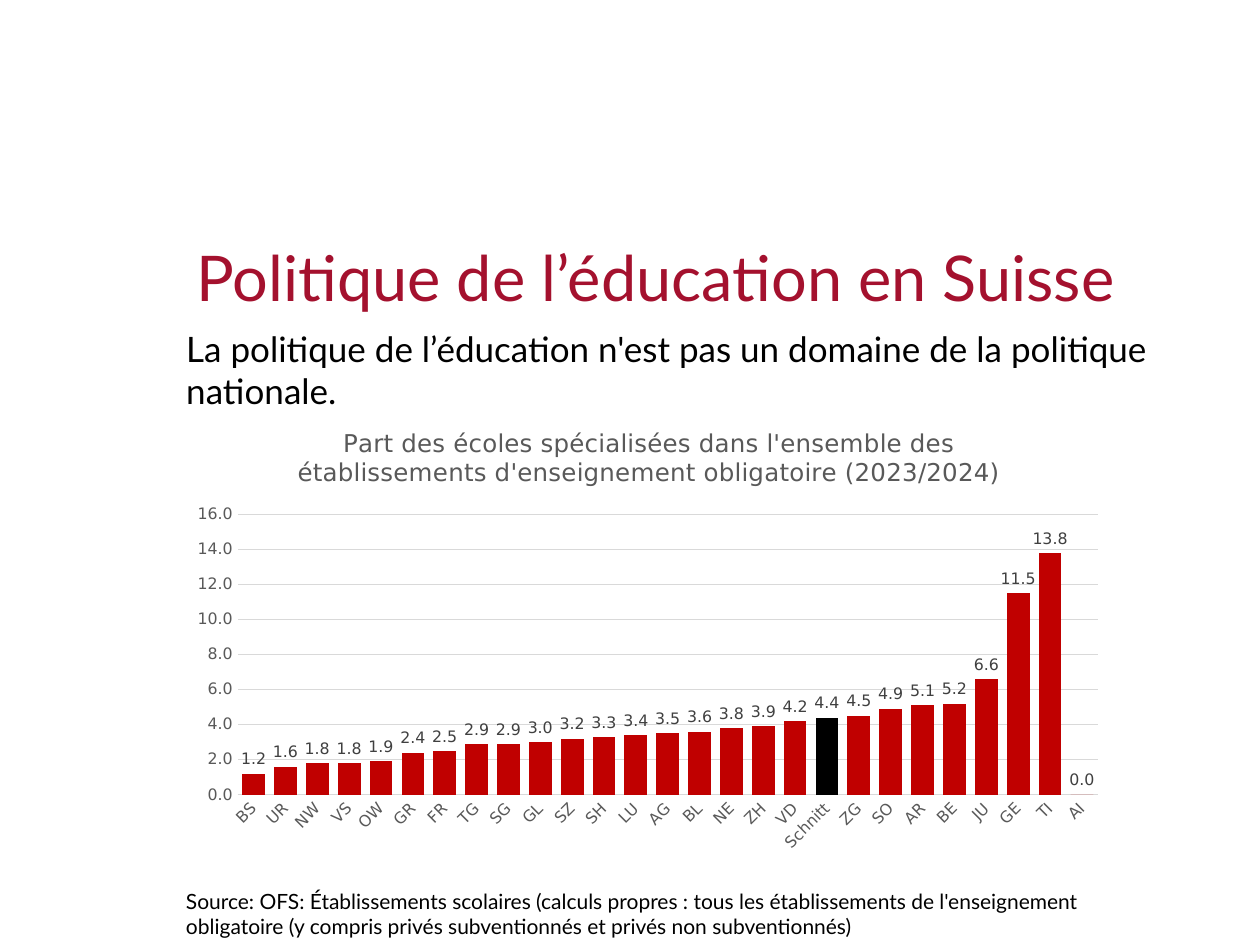
from pptx import Presentation
from pptx.chart.data import CategoryChartData
from pptx.dml.color import RGBColor
from pptx.enum.chart import XL_CHART_TYPE, XL_LABEL_POSITION, XL_TICK_MARK
from pptx.enum.text import MSO_ANCHOR, MSO_AUTO_SIZE, PP_ALIGN
from pptx.oxml import parse_xml
from pptx.oxml.ns import nsdecls
from pptx.util import Cm, Pt

COLUMN = XL_CHART_TYPE.COLUMN_CLUSTERED
ABOVE = XL_LABEL_POSITION.OUTSIDE_END
NO_TICK = XL_TICK_MARK.NONE
TOP, BOTTOM = MSO_ANCHOR.TOP, MSO_ANCHOR.BOTTOM
LEFT = PP_ALIGN.LEFT
NO_FIT = MSO_AUTO_SIZE.NONE

# Content
TITLE = "Politique de l’éducation en Suisse"
BODY = "La politique de l’éducation n'est pas un domaine de la politique nationale."
SOURCE = ("Source: OFS: Établissements scolaires (calculs propres : tous les "
          "établissements de l'enseignement obligatoire (y compris privés "
          "subventionnés et privés non subventionnés)")
HEAD = ("Part des écoles spécialisées dans l'ensemble des établissements "
        "d'enseignement obligatoire (2023/2024)")
MEAN = "Schnitt"
SHARES = {
    "BS": 1.2, "UR": 1.6, "NW": 1.8, "VS": 1.8, "OW": 1.9, "GR": 2.4,
    "FR": 2.5, "TG": 2.9, "SG": 2.9, "GL": 3.0, "SZ": 3.2, "SH": 3.3,
    "LU": 3.4, "AG": 3.5, "BL": 3.6, "NE": 3.8, "ZH": 3.9, "VD": 4.2,
    MEAN: 4.4, "ZG": 4.5, "SO": 4.9, "AR": 5.1, "BE": 5.2, "JU": 6.6,
    "GE": 11.5, "TI": 13.8, "AI": 0.0,
}
COLORS = {"title": "A4112E", "text": "000000", "bar": "C00000", "mean": "000000",
          "axis": "595959", "label": "404040", "grid": "D9D9D9"}
TEXT_FONT, CHART_FONT = "Lato", "DejaVu Sans"
PLOT = {"x": 0.06, "y": 0.24, "w": 0.92, "h": 0.62}


def color(key):
    return RGBColor.from_string(COLORS[key])


def style(font, size, key, face=CHART_FONT):
    font.name, font.size, font.bold = face, Pt(size), False
    font.color.rgb = color(key)


def write(shape, text, box, size, key="text", anchor=TOP):
    shape.left, shape.top, shape.width, shape.height = (Cm(n) for n in box)
    frame = shape.text_frame
    frame.word_wrap, frame.auto_size = True, NO_FIT
    frame.vertical_anchor = anchor
    frame.text = text
    para = frame.paragraphs[0]
    para.alignment, para.space_before = LEFT, Pt(0)
    style(para.runs[0].font, size, key, TEXT_FONT)
    return para


def rule(line, key):
    line.color.rgb = color(key)
    line.width = Pt(0.75)


def paint(fill, key):
    fill.solid()
    fill.fore_color.rgb = color(key)


deck = Presentation()
deck.slide_width, deck.slide_height = Cm(25.4), Cm(19.05)
slide = deck.slides.add_slide(deck.slide_layouts[1])

# Title, unbulleted body and source note
title, body = slide.placeholders
write(title, TITLE, (3.71, 3.28, 20.32, 3.18), 36, "title", BOTTOM)
para = write(body, BODY, (3.5, 6.48, 21.9, 11), 20)
props = para._p.get_or_add_pPr()
props.set("marL", "0")
props.set("indent", "0")
props.append(parse_xml(f"<a:buNone {nsdecls('a')}/>"))
note = slide.shapes.add_textbox(0, 0, 0, 0)
write(note, SOURCE, (3.5, 17.78, 18.6, 1.27), 12)

# Chart of shares by canton
data = CategoryChartData(number_format="0.0")
data.categories = list(SHARES)
data.add_series("Series 1", list(SHARES.values()))
chart = slide.shapes.add_chart(
    COLUMN, Cm(3.66), Cm(8.18), Cm(18.85), Cm(9.12), data).chart
style(chart.font, 10, "text")
chart.has_legend = False
chart.has_title = True
chart.chart_title.include_in_layout = False
frame = chart.chart_title.text_frame
frame.text = HEAD
style(frame.paragraphs[0].runs[0].font, 14, "axis")

# Bars, with the mean in its own colour
plot = chart.plots[0]
plot.gap_width, plot.overlap, plot.vary_by_categories = 40, 30, False
bars = plot.series[0]
bars.invert_if_negative = False
paint(bars.format.fill, "bar")
paint(bars.points[list(SHARES).index(MEAN)].format.fill, "mean")
labels = bars.data_labels
labels.show_value, labels.position = True, ABOVE
labels.number_format, labels.number_format_is_linked = "0.0", False
style(labels.font, 9, "label")

# Axes
cats, vals = chart.category_axis, chart.value_axis
for axis in (cats, vals):
    axis.major_tick_mark = axis.minor_tick_mark = NO_TICK
    style(axis.tick_labels.font, 9, "axis")
rule(cats.format.line, "grid")
cats._element.txPr.bodyPr.set("rot", "-2700000")
vals.minimum_scale, vals.maximum_scale, vals.major_unit = 0, 16, 2
vals.tick_labels.number_format = "0.0"
vals.tick_labels.number_format_is_linked = False
vals.format.line.fill.background()
rule(vals.major_gridlines.format.line, "grid")

# Fixed inner plot area
area = chart._chartSpace.chart.plotArea
for old in area.xpath("c:layout"):
    area.remove(old)
parts = "".join(f'<c:{k}Mode val="edge"/>' for k in "xy")
parts += "".join(f'<c:{k} val="{v}"/>' for k, v in PLOT.items())
area.insert(0, parse_xml(
    f"<c:layout {nsdecls('c')}><c:manualLayout>"
    f'<c:layoutTarget val="inner"/>{parts}</c:manualLayout></c:layout>'))

deck.save("out.pptx")
